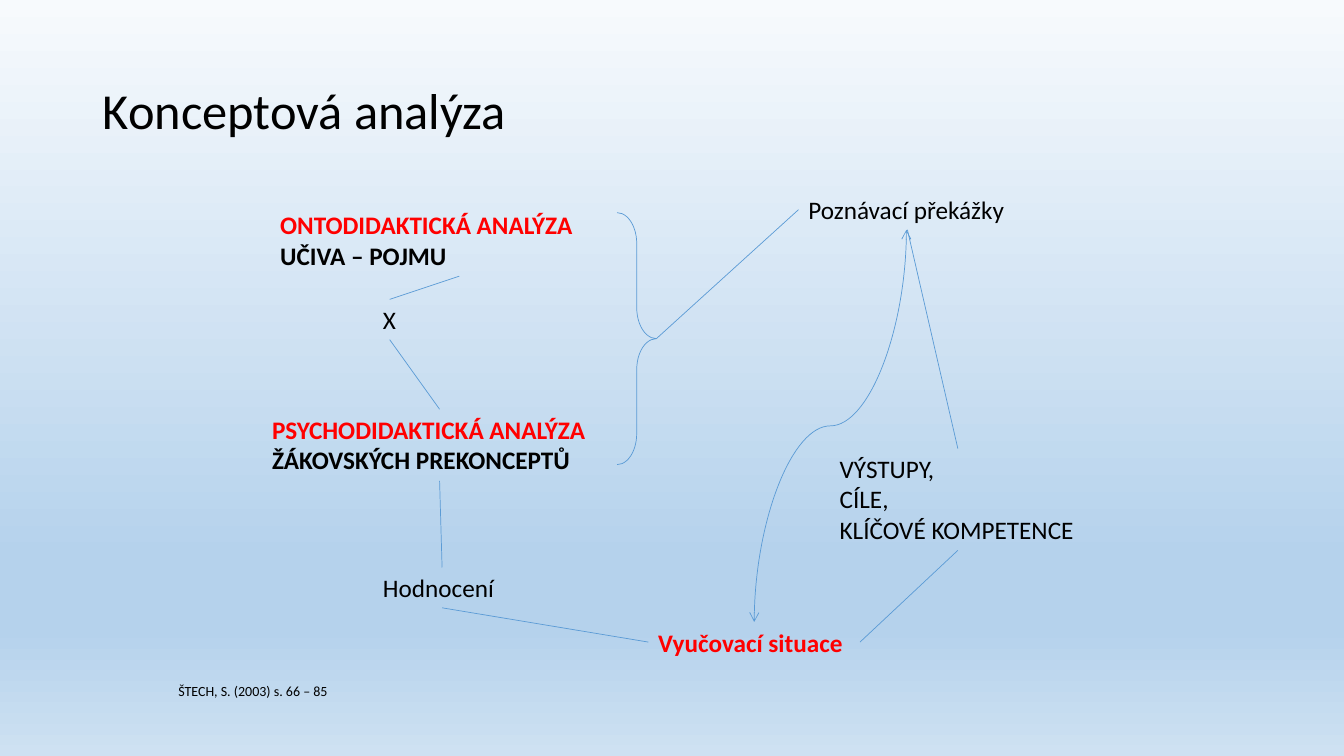
from lxml import etree
from pptx import Presentation
from pptx import util as u
from pptx.dml.color import RGBColor
from pptx.enum import shapes, text
from pptx.oxml import ns

COLORS = {
    "black": "000000",
    "red": "FF0000",
    "line": "5B9BD5",
    "sky_top": "F7FAFD",
    "sky_middle": "B5D2EC",
    "sky_bottom": "CEE1F2",
}
FONT = "Calibri"
TOP, LEFT, BOTTOM, RIGHT = range(4)


def color(name):
    return RGBColor.from_string(COLORS[name])


def add_run(paragraph, content, size=18, fill="black", bold=False):
    run = paragraph.add_run()
    run.text = content
    run.font.name = FONT
    run.font.size = u.Pt(size)
    run.font.bold = bold
    run.font.color.rgb = color(fill)


def add_label(slide, box, paragraphs, wrap=False, **style):
    shape = slide.shapes.add_textbox(*map(u.Inches, box))
    frame = shape.text_frame
    frame.word_wrap = wrap
    frame.auto_size = text.MSO_AUTO_SIZE.SHAPE_TO_FIT_TEXT
    for index, content in enumerate(paragraphs):
        paragraph = frame.add_paragraph() if index else frame.paragraphs[0]
        add_run(paragraph, content, **style)
    return shape


def add_analysis(slide, box, heading, subject):
    shape = add_label(slide, box, [heading + " "], wrap=True, fill="red", bold=True)
    add_run(shape.text_frame.paragraphs[0], subject, bold=True)
    return shape


def style_line(shape):
    shape.line.color.rgb = color("line")
    shape.line.width = u.Pt(0.5)


def add_line(slide, start=(0, 0), end=(0, 0), kind=shapes.MSO_CONNECTOR.STRAIGHT):
    connector = slide.shapes.add_connector(kind, *map(u.Inches, start + end))
    style_line(connector)
    etree.SubElement(connector._element.spPr, ns.qn("a:effectLst"))
    return connector


def join(slide, first, first_side, second, second_side):
    connector = add_line(slide)
    connector.begin_connect(first, first_side)
    connector.end_connect(second, second_side)


def add_double_arrow(slide, start, end):
    connector = add_line(slide, start, end, shapes.MSO_CONNECTOR.CURVE)
    connector._element.spPr.find(ns.qn("a:xfrm")).set("rot", str(90 * 60000))
    outline = connector.line._get_or_add_ln()
    for tag in ("a:headEnd", "a:tailEnd"):
        etree.SubElement(outline, ns.qn(tag), type="arrow")


def add_brace(slide, box):
    brace = slide.shapes.add_shape(shapes.MSO_SHAPE.RIGHT_BRACE, *map(u.Inches, box))
    brace.adjustments[0] = 0.79
    brace.shadow.inherit = False
    brace.fill.background()
    style_line(brace)


def set_background(slide, stops):
    fill = slide.background.fill
    fill.gradient()
    fill.gradient_angle = 270
    stop_list = next(slide._element.iter(ns.qn("a:gsLst")))
    for stop in list(stop_list):
        stop_list.remove(stop)
    for percent, name in stops:
        stop = etree.SubElement(stop_list, ns.qn("a:gs"), pos=str(percent * 1000))
        etree.SubElement(stop, ns.qn("a:srgbClr"), val=COLORS[name])


def set_title(slide, box, content):
    title = slide.shapes.title
    title.left, title.top, title.width, title.height = map(u.Inches, box)
    title.text_frame.vertical_anchor = text.MSO_ANCHOR.MIDDLE
    paragraph = title.text_frame.paragraphs[0]
    paragraph.alignment = text.PP_ALIGN.LEFT
    paragraph.line_spacing = 0.9
    add_run(paragraph, content, size=36)


def main():
    presentation = Presentation()
    presentation.slide_width = u.Inches(13.33)
    presentation.slide_height = u.Inches(7.5)
    slide = presentation.slides.add_slide(presentation.slide_layouts[5])
    set_background(slide, [(0, "sky_top"), (74, "sky_middle"),
                           (83, "sky_middle"), (100, "sky_bottom")])
    set_title(slide, (0.92, 0.4, 11.5, 1.45), "Konceptová analýza")

    content_analysis = add_analysis(
        slide, (2.68, 2.03, 3.75, 0.71), "ONTODIDAKTICKÁ ANALÝZA", "UČIVA – POJMU")
    pupil_analysis = add_analysis(
        slide, (2.6, 4.06, 3.52, 0.71), "PSYCHODIDAKTICKÁ ANALÝZA", "ŽÁKOVSKÝCH PREKONCEPTŮ")
    obstacles = add_label(slide, (7.92, 1.88, 2.16, 0.4), ["Poznávací překážky"])
    outcomes = add_label(slide, (8.23, 4.45, 2.54, 1.01),
                         ["VÝSTUPY,", "CÍLE,", "KLÍČOVÉ KOMPETENCE"])
    situation = add_label(slide, (6.43, 6.17, 2.1, 0.4), ["Vyučovací situace"],
                          fill="red", bold=True)
    assessment = add_label(slide, (3.7, 5.63, 1.37, 0.4), ["Hodnocení"])
    versus = add_label(slide, (3.7, 2.97, 0.33, 0.4), ["X"])
    add_label(slide, (1.67, 6.72, 4.22, 0.57), ["ŠTECH, S. (2003) s. 66 – 85"],
              wrap=True, size=10)

    add_brace(slide, (6.12, 2.11, 0.39, 2.5))
    add_line(slide, start=(6.51, 3.36)).end_connect(obstacles, LEFT)
    for link in [
        (obstacles, BOTTOM, outcomes, TOP),
        (outcomes, BOTTOM, situation, RIGHT),
        (situation, LEFT, assessment, BOTTOM),
        (assessment, TOP, pupil_analysis, BOTTOM),
        (content_analysis, BOTTOM, versus, TOP),
        (versus, BOTTOM, pupil_analysis, TOP),
    ]:
        join(slide, *link)
    add_double_arrow(slide, (6.29, 3.47), (10.18, 4.98))
    presentation.save("out.pptx")


if __name__ == "__main__":
    main()
